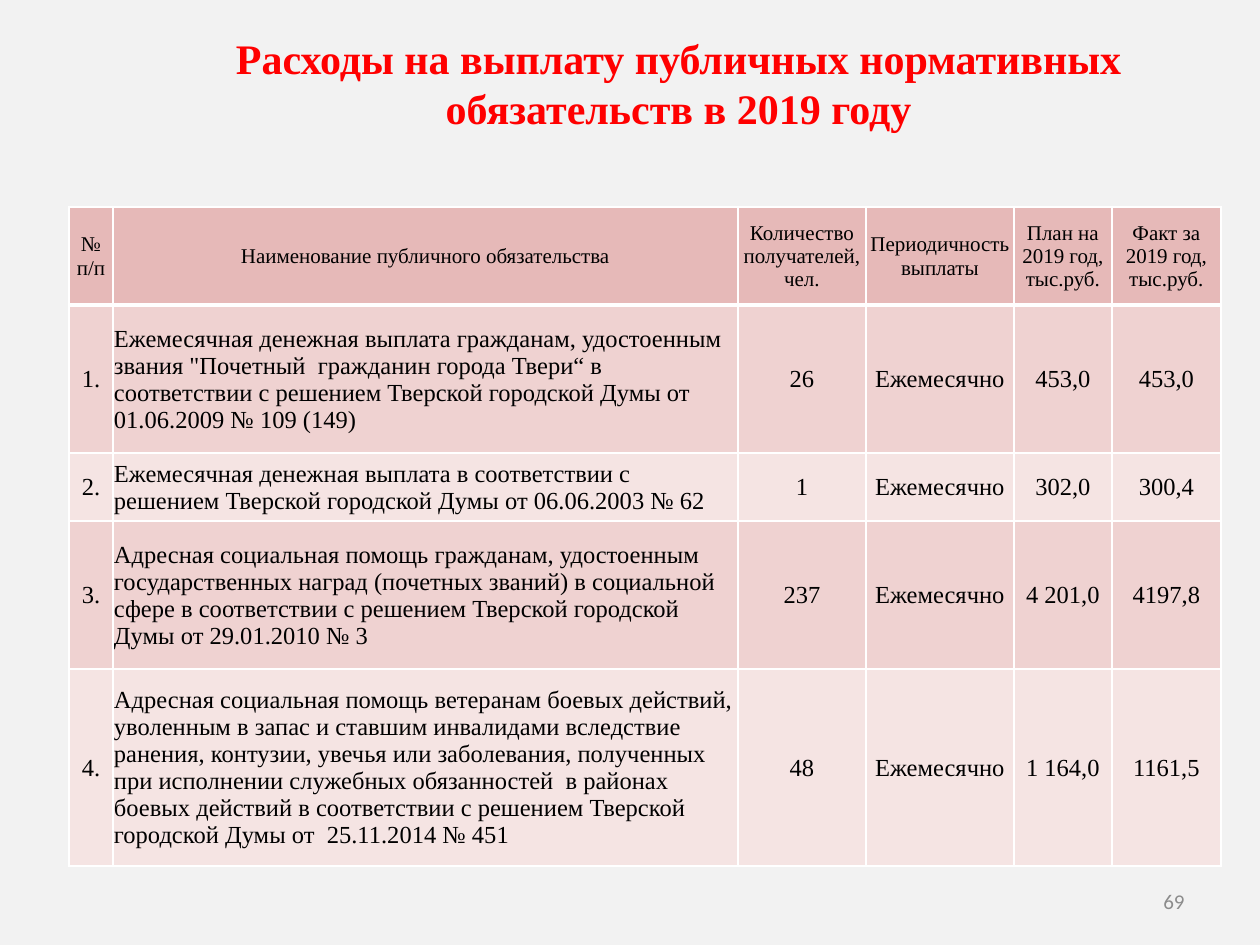
"""Build the slide on public obligation payments in 2019."""
from lxml.etree import SubElement
from pptx import Presentation
from pptx.dml.color import RGBColor
from pptx.enum.text import MSO_ANCHOR, MSO_AUTO_SIZE, PP_ALIGN
from pptx.oxml.ns import qn
from pptx.util import Pt

PX = 914400 / 126
COLORS = {
    "page": "F2F2F2", "title": "FF0000", "text": "000000", "number": "8C8C8C",
    "header": "E6B9B8", "odd": "EFD2D1", "even": "F5E4E3", "border": "FFFFFF",
}
HEADERS = [
    "№\nп/п", "Наименование публичного обязательства", "Количество получателей, чел.",
    "Периодичность выплаты", "План на 2019 год, тыс.руб.", "Факт за 2019 год, тыс.руб.",
]
PAYMENTS = [
    ("Ежемесячная денежная выплата гражданам, удостоенным звания \"Почетный  гражданин города Твери“ "
     "в соответствии с решением Тверской городской Думы от 01.06.2009 № 109 (149)",
     "26", "453,0", "453,0"),
    ("Ежемесячная денежная выплата в соответствии с решением Тверской городской Думы от 06.06.2003 № 62",
     "1", "302,0", "300,4"),
    ("Адресная социальная помощь гражданам, удостоенным государственных наград (почетных званий) "
     "в социальной сфере в соответствии с решением Тверской городской Думы от 29.01.2010 № 3",
     "237", "4 201,0", "4197,8"),
    ("Адресная социальная помощь ветеранам боевых действий, уволенным в запас и ставшим инвалидами "
     "вследствие ранения, контузии, увечья или заболевания, полученных при исполнении служебных "
     "обязанностей  в районах боевых действий в соответствии с решением Тверской городской Думы "
     "от  25.11.2014 № 451",
     "48", "1 164,0", "1161,5"),
]
COLUMN_WIDTHS = [44, 625, 128, 148, 98, 109]
ROW_HEIGHTS = [98, 148, 68, 148, 197]


def px(*lengths):
    return [round(length * PX) for length in lengths]


def style_text(frame, size, color, align, font="Times New Roman", bold=False):
    for paragraph in frame.paragraphs:
        paragraph.alignment = align
        paragraph.font.name = font
        paragraph.font.size = Pt(size)
        paragraph.font.bold = bold
        paragraph.font.color.rgb = RGBColor.from_string(COLORS[color])


deck = Presentation()
deck.slide_width, deck.slide_height = px(1260, 945)
page = deck.slides.add_slide(deck.slide_layouts[5])
page.background.fill.solid()
page.background.fill.fore_color.rgb = RGBColor.from_string(COLORS["page"])

title = page.shapes.title
title.left, title.top, title.width, title.height = px(123, 26, 1111, 115)
title.text_frame.text = "Расходы на выплату публичных нормативных\nобязательств в 2019 году"
title.text_frame.vertical_anchor = MSO_ANCHOR.TOP
title.text_frame.auto_size = MSO_AUTO_SIZE.NONE
style_text(title.text_frame, 24, "title", PP_ALIGN.CENTER, bold=True)

rows = [HEADERS] + [
    [f"{number}.", name, people, "Ежемесячно", plan, fact]
    for number, (name, people, plan, fact) in enumerate(PAYMENTS, 1)
]
table = page.shapes.add_table(
    len(rows), len(HEADERS), *px(69, 207, sum(COLUMN_WIDTHS), sum(ROW_HEIGHTS))
).table
table.first_row = False
table.horz_banding = False
for column, width in zip(table.columns, px(*COLUMN_WIDTHS)):
    column.width = width
for row, height in zip(table.rows, px(*ROW_HEIGHTS)):
    row.height = height

for row_index, values in enumerate(rows):
    fill = "header" if row_index == 0 else "odd" if row_index % 2 else "even"
    for column_index, value in enumerate(values):
        cell = table.cell(row_index, column_index)
        cell.text = value
        cell.vertical_anchor = MSO_ANCHOR.MIDDLE
        cell.margin_left, cell.margin_top, cell.margin_right, cell.margin_bottom = px(1, 1, 1, 0)
        is_name = row_index > 0 and column_index == 1
        align = PP_ALIGN.LEFT if is_name else PP_ALIGN.CENTER
        style_text(cell.text_frame, 14 if row_index else 12, "text", align)
        properties = cell._tc.get_or_add_tcPr()
        for side in "LRTB":
            thick = (row_index, side) in [(0, "B"), (1, "T")]
            line = SubElement(properties, qn(f"a:ln{side}"), w=str(Pt(3 if thick else 1)))
            SubElement(SubElement(line, qn("a:solidFill")), qn("a:srgbClr"), val=COLORS["border"])
        cell.fill.solid()
        cell.fill.fore_color.rgb = RGBColor.from_string(COLORS[fill])

number_box = page.shapes.add_textbox(*px(903, 876, 294, 50))
number_box.text_frame.word_wrap = True
number_box.text_frame.vertical_anchor = MSO_ANCHOR.MIDDLE
number_box.text_frame.text = "69"
style_text(number_box.text_frame, 12, "number", PP_ALIGN.RIGHT, font="Calibri")

deck.save("out.pptx")
